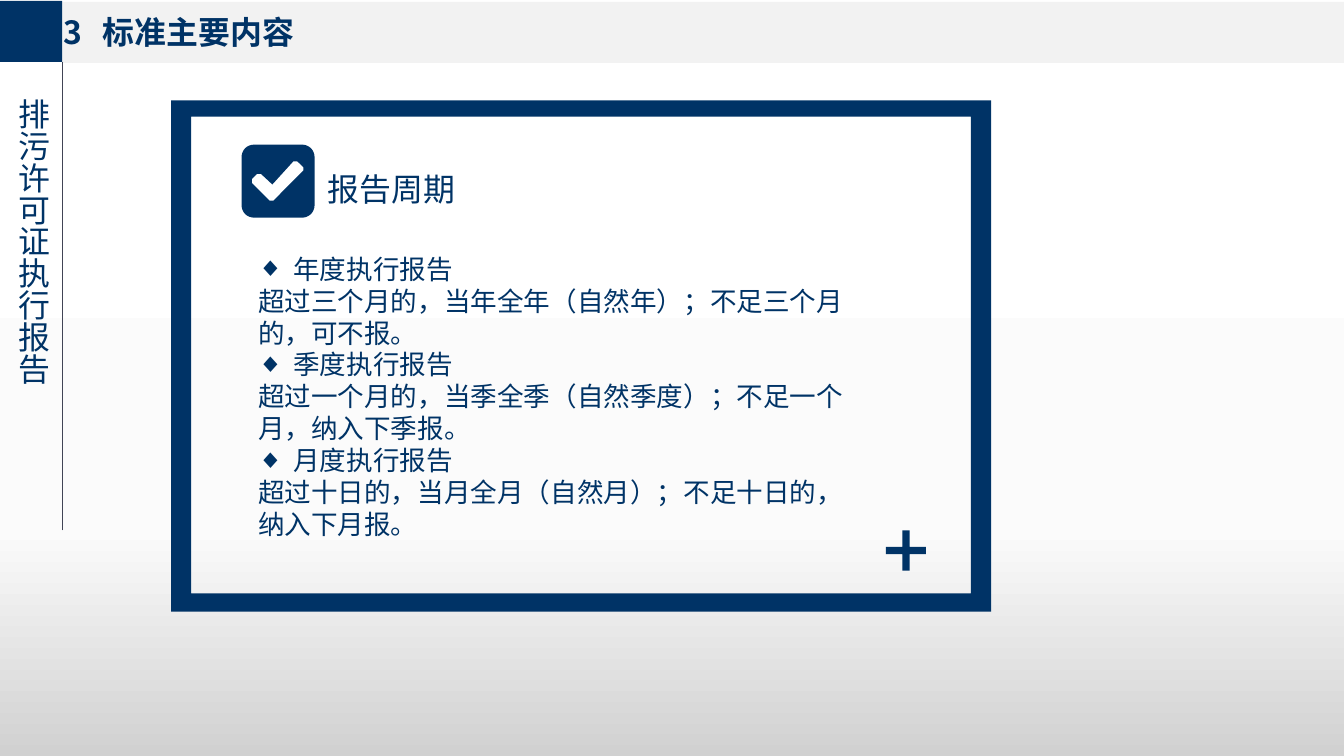
import copy
import math

import pptx
import pptx.dml.color
import pptx.enum.shapes
import pptx.enum.text
import pptx.oxml
import pptx.oxml.ns
import pptx.util

Pt = pptx.util.Pt
qn = pptx.oxml.ns.qn
SHAPE = pptx.enum.shapes.MSO_SHAPE
ANCHOR = pptx.enum.text.MSO_ANCHOR

COLORS = {"navy": "003366", "band": "F2F2F2", "rule": "414455"}
BACKGROUND_STOPS = [(0.14, "FFFFFF"), (0.7, "FBFBFB"), (1, "D1D1D1")]
CJK, CONDENSED = "Noto Sans CJK SC", "Roboto Condensed"
LIST_TAB = 33.84
UNITS_PER_POINT = 100

REPORTS = [
    ("年度执行报告", "超过三个月的，当年全年（自然年）；不足三个月的，可不报。"),
    ("季度执行报告", "超过一个月的，当季全季（自然季度）；不足一个月，纳入下季报。"),
    ("月度执行报告", "超过十日的，当月全月（自然月）；不足十日的，纳入下月报。"),
]

FRAME_OUTER = [(129, 75.6), (746.6, 75.6), (746.6, 460.8), (129, 460.8)]
FRAME_INNER = [(144, 87.8), (144, 447), (731.5, 447), (731.5, 87.8)]
TICK = [(228.6, 128.5), (228.6, 126), (224, 121.6), (221, 121.6),
        (205.2, 139), (196.6, 131), (193.6, 131), (189.8, 134.8),
        (189.8, 138), (203, 151.2), (206, 151.2)]


def rgb(value):
    return pptx.dml.color.RGBColor.from_string(value)


def paint(shape, color):
    shape.fill.solid()
    shape.fill.fore_color.rgb = rgb(COLORS[color])
    shape.line.fill.background()
    shape.shadow.inherit = False


def add_preset(slide, preset, box, color):
    shape = slide.shapes.add_shape(preset, *map(Pt, box))
    paint(shape, color)
    return shape


def add_cutout(slide, outline, hole):
    """Fill an outline, leaving out a hole drawn in the opposite direction."""
    outer, inner = ([(x * UNITS_PER_POINT, y * UNITS_PER_POINT) for x, y in points]
                    for points in (outline, hole))
    builder = slide.shapes.build_freeform(*outer[0], scale=Pt(1) / UNITS_PER_POINT)
    builder.add_line_segments(outer[1:])
    builder.move_to(*inner[0])
    builder.add_line_segments(inner[1:])
    paint(builder.convert_to_shape(), "navy")


def rounded_square(left, top, side, radius, steps=8):
    """Return the clockwise points of a square with round corners."""
    near, far = radius, side - radius
    centers = [(far, near), (far, far), (near, far), (near, near)]
    points = []
    for corner, (x, y) in enumerate(centers):
        for step in range(steps + 1):
            angle = math.pi / 2 * (corner - 1 + step / steps)
            points.append((left + x + radius * math.cos(angle),
                           top + y + radius * math.sin(angle)))
    return points


def add_rule(slide, x, bottom, top):
    rule = slide.shapes.add_connector(
        pptx.enum.shapes.MSO_CONNECTOR.STRAIGHT, Pt(x), Pt(bottom), Pt(x), Pt(top))
    rule.line.color.rgb = rgb(COLORS["rule"])
    rule.line.width = Pt(0.25)
    rule._element.spPr.append(pptx.oxml.parse_xml(
        f"<a:effectLst {pptx.oxml.ns.nsdecls('a')}/>"))


def place(shape, box, insets=(0, 0), wrap=True, anchor=ANCHOR.TOP):
    """Set the box and text frame of a shape, with side and end insets."""
    shape.left, shape.top, shape.width, shape.height = map(Pt, box)
    frame = shape.text_frame
    frame.margin_left = frame.margin_right = Pt(insets[0])
    frame.margin_top = frame.margin_bottom = Pt(insets[1])
    frame.auto_size = pptx.enum.text.MSO_AUTO_SIZE.NONE
    frame.word_wrap = wrap
    frame.vertical_anchor = anchor
    return frame


def set_list_format(paragraph, margin, indent=0, bullet=None):
    properties = paragraph._p.get_or_add_pPr()
    properties.set("marL", str(Pt(margin)))
    properties.set("indent", str(Pt(indent)))
    mark = f'a:buChar char="{bullet}"' if bullet else "a:buNone"
    ns = pptx.oxml.ns.nsdecls("a")
    properties.append(pptx.oxml.parse_xml(f"<{mark} {ns}/>"))
    properties.append(pptx.oxml.parse_xml(
        f'<a:tabLst {ns}><a:tab pos="{Pt(LIST_TAB)}" algn="l"/></a:tabLst>'))


def write(paragraph, text, size, leading, font=CJK, bold=False):
    """Add a run to a left-aligned paragraph with a fixed line height."""
    paragraph.alignment = pptx.enum.text.PP_ALIGN.LEFT
    paragraph.line_spacing = Pt(leading)
    paragraph.space_before = Pt(0)
    run = paragraph.add_run()
    run.text = text
    run.font.size = Pt(size)
    run.font.bold = bold
    run.font.color.rgb = rgb(COLORS["navy"])
    run.font.name = font
    east_asian = pptx.oxml.parse_xml(
        f'<a:ea {pptx.oxml.ns.nsdecls("a")} typeface="{font}"/>')
    run.font._element.find(qn("a:latin")).addnext(east_asian)
    return run


def set_background(slide):
    fill = slide.background.fill
    fill.gradient()
    fill.gradient_angle = 270
    stop_list = slide._element.find(".//" + qn("a:gsLst"))
    stop_list.append(copy.deepcopy(stop_list[-1]))
    for stop, (position, color) in zip(fill.gradient_stops, BACKGROUND_STOPS):
        stop.position = position
        stop.color.rgb = rgb(color)


def add_title(slide):
    title = slide.shapes.title
    slide.shapes._spTree.append(title._element)
    heading = place(title, (48.2, 8.5, 220, 29.5)).paragraphs[0]
    number, gap, name = (write(heading, text, 24, 29.5, bold=True)
                         for text in ("3", " ", "标准主要内容"))
    gap.font._element.set("spc", "960")


def add_section_name(slide):
    section = slide.shapes.add_textbox(0, 0, 0, 0)
    frame = place(section, (10.5, 74.2, 28.8, 386))
    frame._txBody.bodyPr.set("vert", "eaVert")
    write(frame.paragraphs[0], "排污许可证执行报告", 24, 28.8)


def add_period_heading(slide):
    period = slide.shapes.add_textbox(0, 0, 0, 0)
    frame = place(period, (239.8, 108.7, 112.3, 51.1), (7.2, 3.6), wrap=False)
    write(frame.paragraphs[0], "报告周期", 24, 44, font=CONDENSED)


def add_report_list(slide):
    reports = slide.placeholders[1]
    slide.shapes._spTree.append(reports._element)
    frame = place(reports, (180, 182.5, 474, 232), (7.2, 3.6), anchor=ANCHOR.MIDDLE)
    for number, (name, rule) in enumerate(REPORTS):
        heading = frame.add_paragraph() if number else frame.paragraphs[0]
        set_list_format(heading, LIST_TAB, -27.36, "◆")
        write(heading, name, 20, 24)
        detail = frame.add_paragraph()
        set_list_format(detail, 7.2)
        write(detail, rule, 20, 24)


def main():
    deck = pptx.Presentation()
    deck.slide_width, deck.slide_height = Pt(1012.5), Pt(569.5)
    slide = deck.slides.add_slide(deck.slide_layouts[1])
    set_background(slide)
    add_preset(slide, SHAPE.RECTANGLE, (46.8, 1.4, 965.7, 46), "band")
    add_preset(slide, SHAPE.RECTANGLE, (0, 0.7, 46.8, 46), "navy")
    add_title(slide)
    add_section_name(slide)
    add_rule(slide, 46.8, 399.6, 46.8)
    add_period_heading(slide)
    add_cutout(slide, rounded_square(182, 109, 55, 9.3), TICK)
    add_cutout(slide, FRAME_OUTER, FRAME_INNER)
    plus = add_preset(slide, SHAPE.CROSS, (667.4, 399.6, 30.2, 30.2), "navy")
    plus.adjustments[0] = 0.41
    add_report_list(slide)
    deck.save("out.pptx")


if __name__ == "__main__":
    main()
